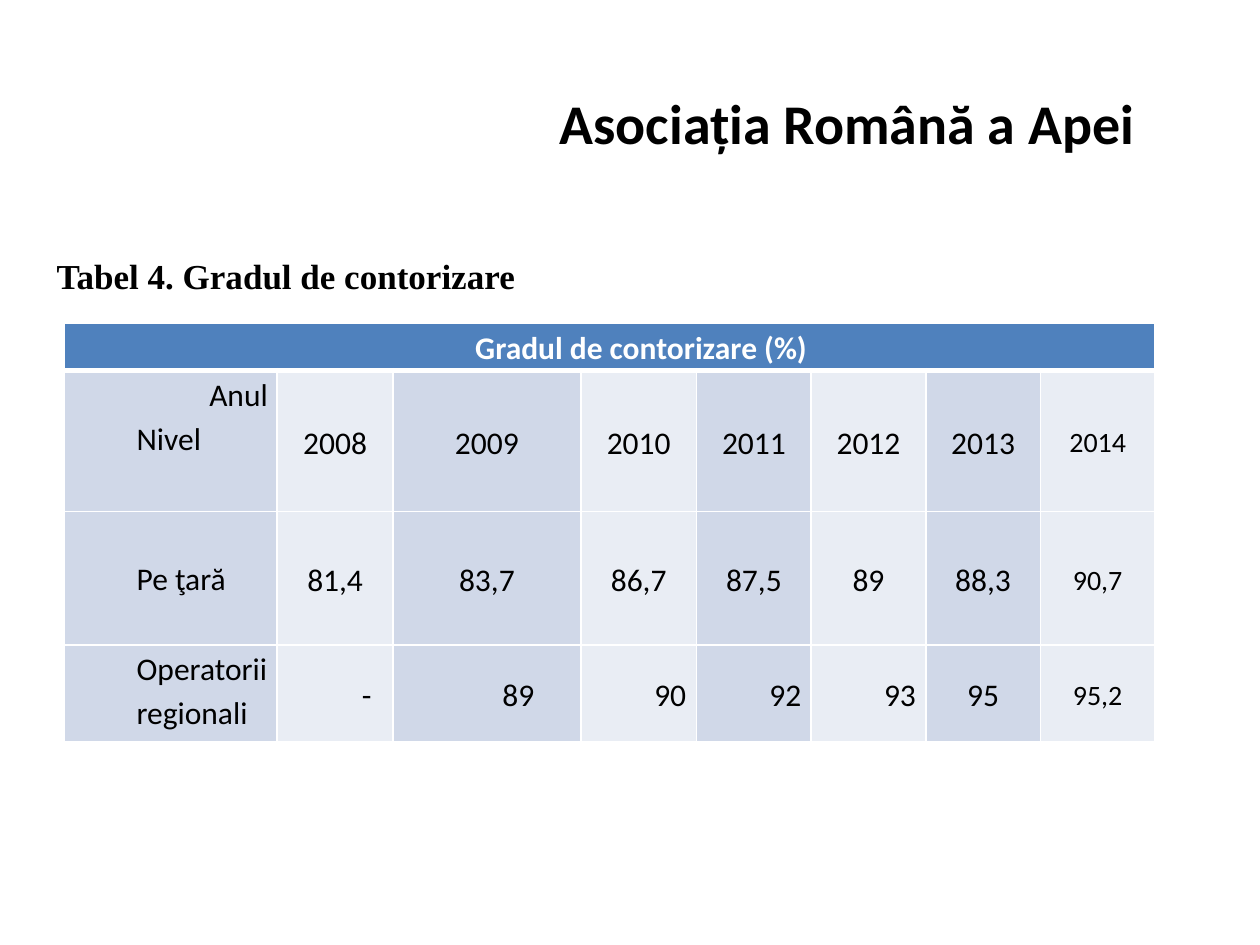
from dataclasses import dataclass

from lxml.etree import SubElement
from pptx import Presentation
from pptx.dml.color import RGBColor
from pptx.enum.text import MSO_ANCHOR, MSO_AUTO_SIZE, PP_ALIGN
from pptx.oxml import parse_xml
from pptx.oxml.ns import nsdecls, qn
from pptx.util import Pt


@dataclass(frozen=True)
class Theme:
    body_font: str = "Calibri"
    caption_font: str = "Times New Roman"
    text: str = "000000"
    white: str = "FFFFFF"
    header: str = "4F81BD"
    bands: tuple = ("D0D8E8", "E9EDF4")
    title_size: int = 32
    caption_size: int = 20
    cell_size: int = 18
    last_column_size: int = 16


THEME = Theme()
INDENT = 36
LINE_HEIGHT = 25
COLUMN_WIDTHS = [121.7, 66.2, 107.3, 66.2] + [65.5] * 4
ROW_HEIGHTS = [26.6, 80.6, 76.3, 55.4]
HEADING = "Gradul de contorizare (%)"
ROWS = [
    [["Anul", "Nivel"], "2008", "2009", "2010", "2011", "2012", "2013", "2014"],
    [["Pe ţară"], "81,4", "83,7", "86,7", "87,5", "89", "88,3", "90,7"],
    [["Operatorii regionali"], "-", "89", "90", "92", "93", "95", "95,2"],
]


def style_paragraph(p, size, color=THEME.text, font=THEME.body_font, bold=False,
                    align=PP_ALIGN.LEFT):
    p.alignment = align
    p.font.name = font
    p.font.size = Pt(size)
    p.font.bold = bold
    p.font.color.rgb = RGBColor.from_string(color)


def add_text(slide, box, text, size, font, align, anchor):
    tf = slide.shapes.add_textbox(*map(Pt, box)).text_frame
    tf.word_wrap = True
    tf.auto_size = MSO_AUTO_SIZE.SHAPE_TO_FIT_TEXT
    tf.vertical_anchor = anchor
    p = tf.paragraphs[0]
    p.text = text
    style_paragraph(p, size, font=font, bold=True, align=align)


def set_borders(cell, top=1, bottom=1):
    tc_pr = cell._tc.get_or_add_tcPr()
    widths = {"lnL": 1, "lnR": 1, "lnT": top, "lnB": bottom}
    for i, (tag, width) in enumerate(widths.items()):
        ln = parse_xml(f'<a:{tag} {nsdecls("a")} w="{Pt(width)}"/>')
        fill = SubElement(ln, qn("a:solidFill"))
        SubElement(fill, qn("a:srgbClr"), val=THEME.white)
        tc_pr.insert(i, ln)


def fill_cell(cell, lines, fill, indent=0, align=PP_ALIGN.CENTER,
              anchor=MSO_ANCHOR.MIDDLE, **font):
    cell.fill.solid()
    cell.fill.fore_color.rgb = RGBColor.from_string(fill)
    cell.margin_left = cell.margin_right = Pt(5.4)
    cell.margin_top = cell.margin_bottom = 0
    cell.vertical_anchor = anchor
    tf = cell.text_frame
    tf.text = "\n".join(lines)
    for p in tf.paragraphs:
        p._p.get_or_add_pPr().set("marL", str(Pt(indent)))
        p.line_spacing = 1.15
        style_paragraph(p, align=align, **font)


def add_metering_table(slide):
    table = slide.shapes.add_table(
        len(ROW_HEIGHTS), len(COLUMN_WIDTHS), Pt(36.7), Pt(185),
        Pt(sum(COLUMN_WIDTHS)), Pt(sum(ROW_HEIGHTS))).table
    for column, width in zip(table.columns, COLUMN_WIDTHS):
        column.width = Pt(width)
    for row, height in zip(table.rows, ROW_HEIGHTS):
        row.height = Pt(height)

    # Heading across all columns
    last = len(COLUMN_WIDTHS) - 1
    heading = table.cell(0, 0)
    heading.merge(table.cell(0, last))
    fill_cell(heading, [HEADING], THEME.header, INDENT, anchor=MSO_ANCHOR.TOP,
              size=THEME.cell_size, color=THEME.white, bold=True)
    for c in range(last + 1):
        set_borders(table.cell(0, c), bottom=3)

    # Years and values, with alternating column colours
    for r, (labels, *values) in enumerate(ROWS, start=1):
        fill_cell(table.cell(r, 0), labels, THEME.bands[0], INDENT,
                  PP_ALIGN.LEFT, MSO_ANCHOR.TOP, size=THEME.cell_size)
        for c, value in enumerate(values, start=1):
            indent = INDENT if r == len(ROWS) and c < last - 1 else 0
            size = THEME.last_column_size if c == last else THEME.cell_size
            fill_cell(table.cell(r, c), [value], THEME.bands[c % 2], indent, size=size)
        for c in range(last + 1):
            set_borders(table.cell(r, c), top=3 if r == 1 else 1)

    # Label cells that differ: right-aligned "Anul", lowered "Pe ţară"
    table.cell(1, 0).text_frame.paragraphs[0].alignment = PP_ALIGN.RIGHT
    table.cell(2, 0).margin_top = Pt(LINE_HEIGHT)


def main():
    prs = Presentation()
    prs.slide_width, prs.slide_height = Pt(720), Pt(540)
    slide = prs.slides.add_slide(prs.slide_layouts[6])

    # Title and caption
    add_text(slide, (290.9, 46.8, 386.6, 46), "Asociația Română a Apei",
             THEME.title_size, THEME.body_font, PP_ALIGN.CENTER, MSO_ANCHOR.TOP)
    add_metering_table(slide)
    add_text(slide, (25.2, 141.8, 680.4, 31.7), "Tabel 4. Gradul de contorizare",
             THEME.caption_size, THEME.caption_font, PP_ALIGN.LEFT, MSO_ANCHOR.MIDDLE)

    prs.save("out.pptx")


if __name__ == "__main__":
    main()
